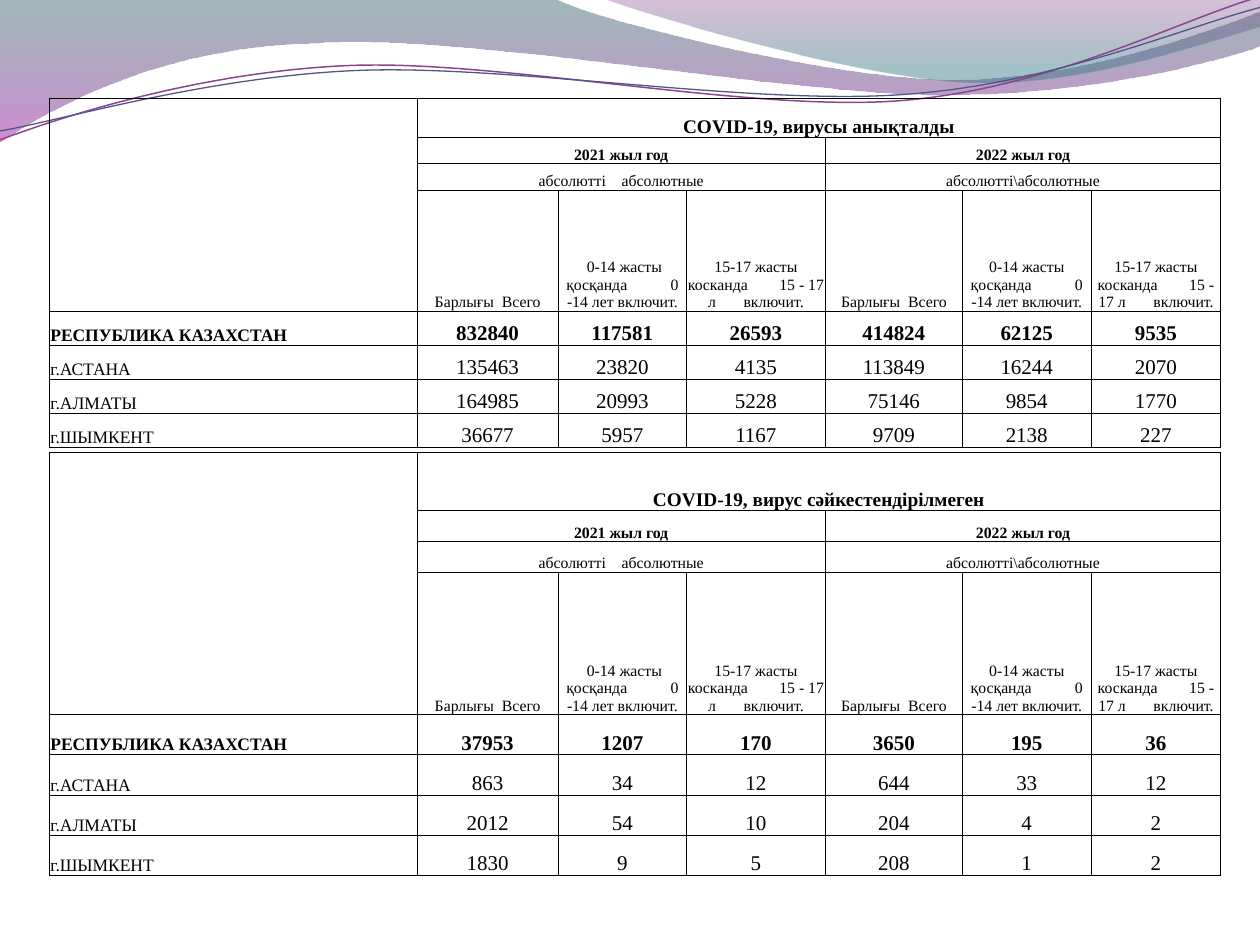
import math
import pptx
import pptx.util
import pptx.dml.color
import pptx.enum.text
import pptx.oxml
import pptx.oxml.ns
import lxml.etree

Inches = pptx.util.Inches
qn = pptx.oxml.ns.qn
FONT = "Times New Roman"
INK = "000000"
TABLE_LEFT = 0.39
LINE_TILT = 357.3
COLUMN_WIDTHS = [2.92, 1.12, 1.02, 1.1, 1.09, 1.02, 1.03]
REGIONS = ["РЕСПУБЛИКА КАЗАХСТАН", "г.АСТАНА", "г.АЛМАТЫ", "г.ШЫМКЕНТ"]
YEARS = ["2021 жыл год", "2022 жыл год"]
UNITS = ["абсолютті    абсолютные", "абсолютті\\абсолютные"]
TOTAL = "Барлығы  Всего"
CHILDREN = "0-14 жасты қосқанда           0 -14 лет включит."
TEENS = "15-17 жасты косканда        15 - 17 л       включит."
AGE_GROUPS = [TOTAL, " " + CHILDREN, TEENS, TOTAL, CHILDREN, TEENS]

DETECTED = [
    [832840, 117581, 26593, 414824, 62125, 9535],
    [135463, 23820, 4135, 113849, 16244, 2070],
    [164985, 20993, 5228, 75146, 9854, 1770],
    [36677, 5957, 1167, 9709, 2138, 227],
]
UNIDENTIFIED = [
    [37953, 1207, 170, 3650, 195, 36],
    [863, 34, 12, 644, 33, 12],
    [2012, 54, 10, 204, 4, 2],
    [1830, 9, 5, 208, 1, 2],
]

BROAD_WAVE = [
    [(0, 0)], [(4.4, -0.01)],
    [(4.76, 0.17), (6.64, 0.63), (7.58, 0.63)],
    [(8.53, 0.63), (9.58, 0.26), (10, 0.09)],
    [(10.01, 0.36)],
    [(9.83, 0.44), (8.7, 0.76), (7.46, 0.75)],
    [(6.22, 0.75), (3.82, 0.28), (2.57, 0.34)],
    [(1.29, 0.36), (0.46, 0.83), (-0.01, 1.13)],
    [(0, 0)],
]
RIGHT_WAVE = [
    [(4.79, -0.01)],
    [(5.09, 0.11), (6.82, 0.62), (7.69, 0.65)],
    [(8.56, 0.69), (9.61, 0.32), (10, 0.21)],
    [(10, 0)], [(4.79, -0.01)],
]
PURPLE_CURVE = [
    [(0, 1.11)],
    [(0.48, 0.93), (1.58, 0.57), (2.77, 0.52)],
    [(3.95, 0.47), (5.93, 0.89), (7.13, 0.8)],
    [(8.33, 0.71), (9.38, 0.15), (9.98, -0.02)],
]
BLUE_CURVE = [
    [(0, 1.04)],
    [(0.47, 0.96), (1.64, 0.61), (2.83, 0.56)],
    [(4.03, 0.51), (5.97, 0.84), (7.17, 0.75)],
    [(8.36, 0.67), (9.41, 0.21), (10, 0.06)],
]


def colour(value):
    return pptx.dml.color.RGBColor.from_string(value)


def turn(point, centre, degrees):
    angle = math.radians(degrees)
    x, y = point[0] - centre[0], point[1] - centre[1]
    return (centre[0] + x * math.cos(angle) - y * math.sin(angle),
            centre[1] + x * math.sin(angle) + y * math.cos(angle))


def add_curve(page, segments, closed):
    points = [(Inches(x), Inches(y)) for segment in segments for x, y in segment]
    builder = page.shapes.build_freeform(*points[0], scale=1.0)
    builder.add_line_segments(points[1:], close=closed)
    shape = builder.convert_to_shape()
    shape.shadow.inherit = False
    lines = iter(shape.element.findall(".//" + qn("a:lnTo")))
    for segment in segments[1:]:
        first = next(lines)
        if len(segment) == 3:
            bend = lxml.etree.Element(qn("a:cubicBezTo"))
            first.addprevious(bend)
            for line in (first, next(lines), next(lines)):
                bend.append(line[0])
                line.getparent().remove(line)
    return shape


def add_wave(page, segments, stops):
    wave = add_curve(page, segments, True)
    wave.line.fill.background()
    wave.fill.gradient()
    wave.fill.gradient_angle = 270
    for stop, (position, value, opacity) in zip(wave.fill.gradient_stops, stops):
        stop.position = position
        stop.color.rgb = colour(value)
    tints = wave.element.spPr.findall(".//" + qn("a:srgbClr"))
    for tint, (position, value, opacity) in zip(tints, stops):
        alpha = lxml.etree.SubElement(tint, qn("a:alpha"))
        alpha.set("val", str(opacity * 1000))


def add_thin_line(page, segments, centre, value, width):
    level = [[turn(point, centre, -LINE_TILT) for point in segment] for segment in segments]
    thin_line = add_curve(page, level, False)
    thin_line.rotation = LINE_TILT
    thin_line.fill.background()
    thin_line.line.color.rgb = colour(value)
    thin_line.line.width = pptx.util.Pt(width)


def style_cell(cell):
    cell.margin_left = cell.margin_right = cell.margin_top = Inches(0.01)
    cell.margin_bottom = 0
    cell.vertical_anchor = pptx.enum.text.MSO_ANCHOR.BOTTOM
    properties = cell._tc.get_or_add_tcPr()
    for side in ("lnL", "lnR", "lnT", "lnB"):
        properties.append(pptx.oxml.parse_xml(
            f'<a:{side} {pptx.oxml.ns.nsdecls("a")} w="6350"><a:solidFill>'
            f'<a:srgbClr val="{INK}"/></a:solidFill></a:{side}>'
        ))
    cell.fill.background()


def write_cell(cell, text, size, bold=False, centred=True):
    cell.text_frame.text = str(text)
    para = cell.text_frame.paragraphs[0]
    if centred:
        para.alignment = pptx.enum.text.PP_ALIGN.CENTER
    font = para.runs[0].font
    font.name = FONT
    font.size = pptx.util.Pt(size)
    font.bold = bold
    font.color.rgb = colour(INK)


def add_case_table(page, top, row_heights, heading, counts):
    frame = page.shapes.add_table(
        len(row_heights), len(COLUMN_WIDTHS), Inches(TABLE_LEFT), Inches(top),
        Inches(sum(COLUMN_WIDTHS)), Inches(sum(row_heights)),
    )
    table = frame.table
    table.first_row = table.horz_banding = False
    for column, width in zip(table.columns, COLUMN_WIDTHS):
        column.width = Inches(width)
    for row, height in zip(table.rows, row_heights):
        row.height = Inches(height)
    for cell in table.iter_cells():
        style_cell(cell)

    table.cell(0, 0).merge(table.cell(3, 0))
    table.cell(0, 1).merge(table.cell(0, 6))
    write_cell(table.cell(0, 1), heading, 11, bold=True)
    for row, labels in ((1, YEARS), (2, UNITS)):
        for column, label in zip((1, 4), labels):
            table.cell(row, column).merge(table.cell(row, column + 2))
            write_cell(table.cell(row, column), label, 9, bold=row == 1)
    for column, label in enumerate(AGE_GROUPS, 1):
        write_cell(table.cell(3, column), label, 9)
    for row, (region, values) in enumerate(zip(REGIONS, counts), 4):
        bold = row == 4
        write_cell(table.cell(row, 0), region, 10, bold, centred=False)
        for column, value in enumerate(values, 1):
            write_cell(table.cell(row, column), value, 12, bold)


def main():
    deck = pptx.Presentation()
    deck.slide_width = Inches(10)
    deck.slide_height = Inches(7.5)
    page = deck.slides.add_slide(deck.slide_layouts[6])
    add_wave(page, BROAD_WAVE, [(0, "2D6368", 45), (1, "A530A9", 55)])
    add_wave(page, RIGHT_WAVE, [(0, "7F2F82", 30), (0.8, "2F7B82", 45)])
    add_thin_line(page, PURPLE_CURVE, (4.99, 0.58), "8D4490", 0.85)
    add_thin_line(page, BLUE_CURVE, (5, 0.59), "53548A", 0.75)
    add_case_table(page, 0.78, [0.31, 0.21, 0.21, 0.96] + [0.27] * 4,
                   "COVID-19, вирусы анықталды", DETECTED)
    add_case_table(page, 3.59, [0.46, 0.25, 0.24, 1.13] + [0.32] * 4,
                   "COVID-19, вирус сәйкестендірілмеген", UNIDENTIFIED)
    deck.save("out.pptx")


if __name__ == "__main__":
    main()
